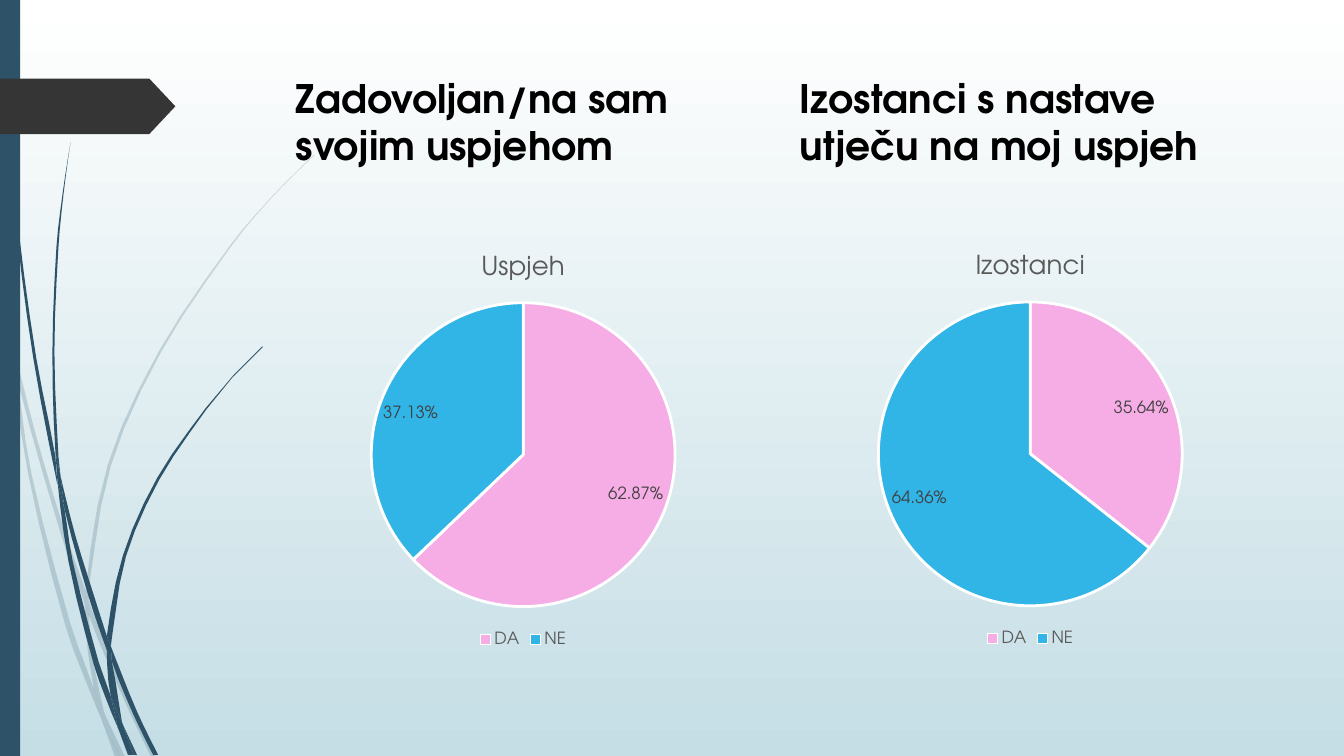
from dataclasses import dataclass

from lxml import etree
from pptx import Presentation
from pptx import util as u
from pptx.chart.data import CategoryChartData
from pptx.dml.color import RGBColor as RGB
from pptx.enum import chart as charts, shapes, text
from pptx.oxml.ns import qn


@dataclass(frozen=True)
class Theme:
    font: str = "TeX Gyre Adventor"
    navy: RGB = RGB(0x2E, 0x53, 0x69)
    charcoal: RGB = RGB(0x35, 0x35, 0x35)
    white: RGB = RGB(0xFF, 0xFF, 0xFF)
    mist: RGB = RGB(0xC5, 0xDE, 0xE5)
    black: RGB = RGB(0, 0, 0)
    grey: RGB = RGB(0x59, 0x59, 0x59)
    label: RGB = RGB(0x40, 0x40, 0x40)
    pink: RGB = RGB(0xF6, 0xAD, 0xE5)
    blue: RGB = RGB(0x31, 0xB4, 0xE6)
    heading_pt: float = 28
    chart_title_pt: float = 18.6
    chart_pt: float = 12


GRID = u.Cm(0.0254)
PALE_BLADES = [
    ([(0, 299), (10, 344), (11, 350)], [(0, 282), (9, 322), (11, 350)]),
    ([(14, 345), (17, 376), (58, 522), (84, 599)], [(14, 345), (36, 433), (62, 520), (85, 586)]),
    ([(88, 596), (88, 610), (123, 694), (150, 751)], [(88, 596), (92, 607), (127, 692), (155, 751)]),
    ([(105, 711), (119, 751)], [(105, 711), (124, 751)]),
    ([(11, 350), (28, 470), (65, 621), (92, 693), (101, 714)],
     [(11, 350), (17, 376), (31, 469), (70, 619), (93, 683), (101, 714)]),
    ([(84, 599), (87, 646), (93, 683), (105, 711)],
     [(84, 599), (88, 608), (91, 646), (103, 706), (105, 711)]),
    ([(312, 153), (268, 197), (228, 244), (158, 348), (107, 461), (85, 586)],
     [(312, 154), (268, 198), (229, 245), (160, 349), (110, 462), (88, 584), (88, 596)]),
    ([(101, 714), (114, 751)], [(101, 714), (119, 751)]),
    ([(85, 586), (84, 599), (88, 608)], [(85, 586), (88, 596), (88, 610)]),
    ([(93, 683), (101, 714), (119, 751)], [(93, 683), (105, 711), (119, 751)]),
]
DARK_BLADES = [
    ([(3, 0), (4, 48), (7, 110), (17, 233), (33, 355), (57, 481)],
     [(4, 0), (5, 48), (8, 109), (19, 232), (36, 355), (55, 453), (57, 481)]),
    ([(60, 472), (64, 505), (88, 592), (106, 645)], [(60, 472), (75, 532), (93, 590), (106, 631)]),
    ([(110, 641), (111, 656), (132, 708), (152, 749)],
     [(110, 641), (113, 649), (136, 706), (157, 749)]),
    ([(57, 477), (68, 557), (93, 659), (111, 708), (117, 722)],
     [(57, 477), (64, 505), (72, 556), (98, 657), (110, 691), (117, 722)]),
    ([(70, 141), (62, 193), (56, 245), (52, 349), (55, 449), (60, 472)],
     [(70, 141), (63, 193), (58, 245), (54, 349), (58, 453), (60, 472)]),
    ([(122, 719), (133, 749)], [(122, 719), (136, 749)]),
    ([(55, 449), (57, 477), (64, 505)], [(55, 449), (60, 472), (64, 505)]),
    ([(260, 344), (231, 373), (204, 405), (156, 474), (122, 551), (106, 631)],
     [(261, 344), (231, 374), (205, 406), (158, 476), (125, 552), (111, 633), (110, 641)]),
    ([(117, 722), (127, 749)], [(117, 722), (131, 749)]),
    ([(106, 645), (110, 691), (122, 719)], [(106, 645), (111, 656), (121, 716), (122, 719)]),
    ([(106, 631), (106, 645), (111, 656)], [(106, 631), (110, 641), (111, 656)]),
    ([(110, 691), (117, 722), (130, 749)], [(110, 691), (122, 719), (133, 749)]),
]


def smooth(edge, steps=3):
    chords = [(b[0] - a[0]) / (b[1] - a[1]) for a, b in zip(edge, edge[1:])]
    inner = [(b[0] - a[0]) / (b[1] - a[1]) for a, b in zip(edge, edge[2:])]
    if not inner:
        return edge
    slopes = [(3 * chords[0] - inner[0]) / 2, *inner, (3 * chords[-1] - inner[-1]) / 2]
    points = [edge[0]]
    for i, ((xa, ya), (xb, yb)) in enumerate(zip(edge, edge[1:])):
        h = yb - ya
        count = steps if h > 40 else 1
        for n in range(1, count + 1):
            t = n / count
            x = (xa + (xb - xa) * t * t * (3 - 2 * t) + h * t * (1 - t) ** 2 * slopes[i]
                 - h * t * t * (1 - t) * slopes[i + 1])
            points.append((x, ya + h * t))
    return points


def apply(target, **fmt):
    for name, value in fmt.items():
        setattr(target, name, value)


class Deck:
    def __init__(self, theme):
        self.theme = theme
        self.prs = Presentation()
        apply(self.prs, slide_width=u.Cm(33.87), slide_height=u.Cm(19.05))
        self.s = self.prs.slides.add_slide(self.prs.slide_layouts[6])

    def style(self, font, size, color, bold=False):
        apply(font, name=self.theme.font, size=u.Pt(size), bold=bold)
        font.color.rgb = color

    def paint(self, sp, color, opacity=100):
        sp.shadow.inherit = False
        sp.fill.solid()
        sp.fill.fore_color.rgb = color
        sp.line.fill.background()
        if opacity < 100:
            clr = sp.fill._xPr.find(qn("a:solidFill"))[0]
            etree.SubElement(clr, qn("a:alpha"), val=str(opacity * 1000))

    def background(self, top, bottom):
        fill = self.s.background.fill
        fill.gradient()
        fill.gradient_angle = 270
        for stop, color, position in zip(fill.gradient_stops, (top, bottom), (0, 1)):
            stop.color.rgb = color
            stop.position = position

    def blade(self, left, right, opacity):
        outline = [(x * GRID, y * GRID) for x, y in smooth(left) + smooth(right)[::-1]]
        builder = self.s.shapes.build_freeform(*outline[0])
        builder.add_line_segments(outline[1:], close=True)
        self.paint(builder.convert_to_shape(), self.theme.navy, opacity)

    def shape(self, kind, box, color):
        sp = self.s.shapes.add_shape(kind, *map(u.Cm, box))
        self.paint(sp, color)
        return sp

    def heading(self, content, box, tab):
        tf = self.s.shapes.add_textbox(*map(u.Cm, box)).text_frame
        apply(tf, word_wrap=True, vertical_anchor=text.MSO_ANCHOR.TOP)
        p = tf.paragraphs[0]
        p.text = content
        tabs = etree.SubElement(p._p.get_or_add_pPr(), qn("a:tabLst"))
        etree.SubElement(tabs, qn("a:tab"), pos=str(u.Cm(tab)), algn="l")
        for r in p.runs:
            self.style(r.font, self.theme.heading_pt, self.theme.black, True)

    def pie(self, name, values, box):
        th = self.theme
        data = CategoryChartData(number_format="0.00%")
        data.categories = ["DA", "NE"]
        data.add_series(name, values)
        chart = self.s.shapes.add_chart(
            charts.XL_CHART_TYPE.PIE, *map(u.Cm, box), data).chart
        self.style(chart.font, 10, th.black)
        apply(chart, has_title=True, has_legend=True)
        chart.chart_title.text_frame.text = name
        self.style(chart.chart_title.text_frame.paragraphs[0].runs[0].font,
                   th.chart_title_pt, th.grey)
        apply(chart.legend, position=charts.XL_LEGEND_POSITION.BOTTOM,
              include_in_layout=False)
        self.style(chart.legend.font, th.chart_pt, th.grey)
        plot = chart.plots[0]
        apply(plot, vary_by_categories=True, has_data_labels=True)
        apply(plot.data_labels, show_value=True, show_percentage=False,
              number_format="0.00%", number_format_is_linked=False,
              position=charts.XL_LABEL_POSITION.BEST_FIT)
        self.style(plot.data_labels.font, th.chart_pt, th.label)
        for i, color in enumerate((th.pink, th.blue)):
            fmt = plot.series[0].points[i].format
            fmt.fill.solid()
            fmt.fill.fore_color.rgb = color
            fmt.line.color.rgb = th.white
            fmt.line.width = u.Pt(2)


def main():
    th = Theme()
    deck = Deck(th)
    deck.background(th.white, th.mist)
    for blades, opacity in ((PALE_BLADES, 20), (DARK_BLADES, 100)):
        for left, right in blades:
            deck.blade(left, right, opacity)
    deck.shape(shapes.MSO_SHAPE.RECTANGLE, (0, 0, 0.51, 19.05), th.navy)
    arrow = deck.shape(shapes.MSO_SHAPE.PENTAGON, (0, 1.98, 4.42, 1.4), th.charcoal)
    arrow.adjustments[0] = 0.47
    deck.heading("Zadovoljan/na sam\tIzostanci s nastave\v"
                 "svojim uspjehom\tutječu na moj uspjeh", (7.21, 1.75, 24.77, 3.56), 12.7)
    deck.pie("Uspjeh", (0.6287, 0.3713), (7.19, 5.93, 11.99, 10.49))
    deck.pie("Izostanci", (0.3564, 0.6436), (19.97, 5.91, 11.99, 10.49))
    deck.prs.save("out.pptx")


if __name__ == "__main__":
    main()
